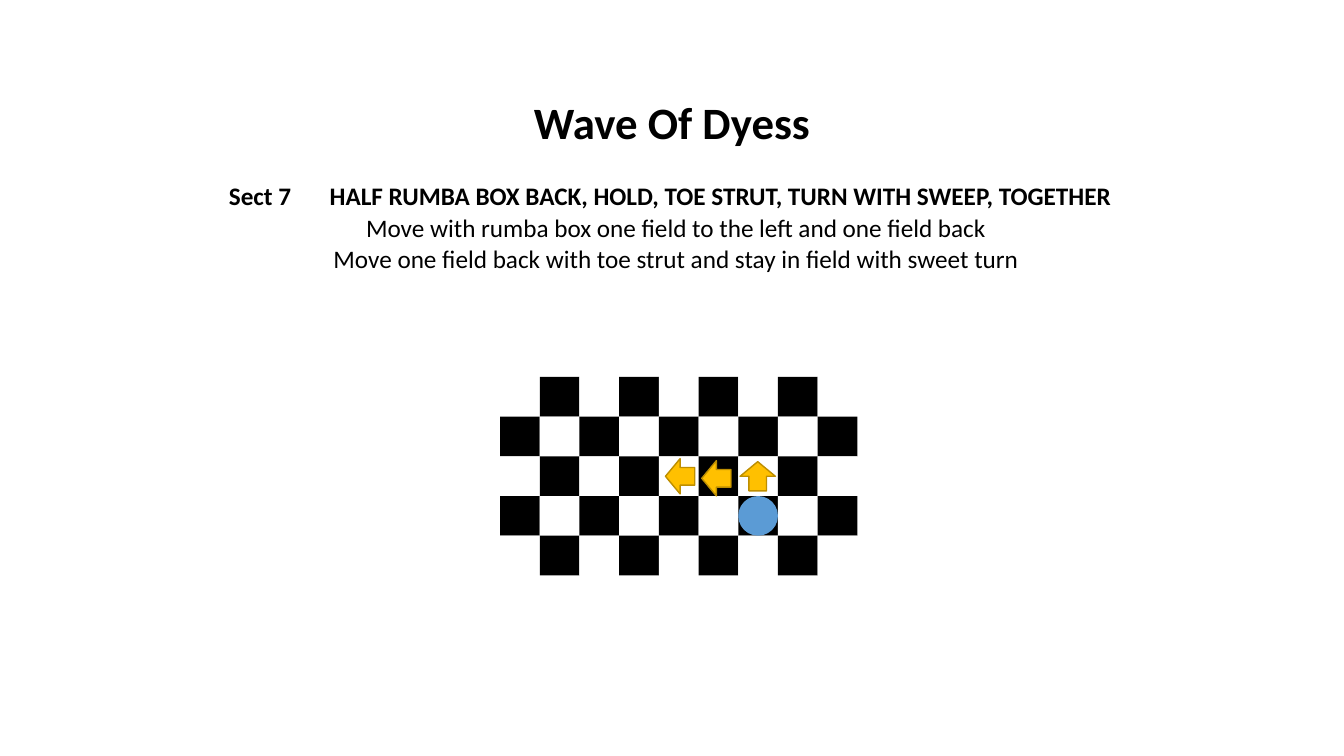
import dataclasses

import lxml.etree
import pptx
import pptx.dml.color
import pptx.enum.shapes
import pptx.enum.text
import pptx.oxml.ns
import pptx.util

Inches = pptx.util.Inches
Shape = pptx.enum.shapes.MSO_SHAPE


@dataclasses.dataclass
class Theme:
    font: str = "Calibri"
    title: int = 32
    body: int = 18
    black: str = "000000"
    white: str = "FFFFFF"
    blue: str = "5B9BD5"
    gold: str = "FFC000"
    edge: str = "BD8E00"


def color(code):
    return pptx.dml.color.RGBColor.from_string(code)


def write(para, text, *, font, size, ink, bold=False, center=True, before=0):
    align = pptx.enum.text.PP_ALIGN
    para.alignment = align.CENTER if center else align.LEFT
    para.space_before = pptx.util.Pt(before)
    run = para.add_run()
    run.text = text
    run.font.name = font
    run.font.size = pptx.util.Pt(size)
    run.font.bold = bold
    run.font.color.rgb = color(ink)


class Deck:
    def __init__(self, theme):
        self.theme = theme
        self.show = pptx.Presentation()
        self.show.slide_width = Inches(13.33)
        self.show.slide_height = Inches(7.5)
        self.slide = self.show.slides.add_slide(self.show.slide_layouts[1])

    def place(self, holder, left, top, width, height):
        holder.left, holder.top = Inches(left), Inches(top)
        holder.width, holder.height = Inches(width), Inches(height)
        frame = holder.text_frame
        frame.word_wrap = True
        frame.auto_size = pptx.enum.text.MSO_AUTO_SIZE.NONE
        frame.vertical_anchor = pptx.enum.text.MSO_ANCHOR.TOP
        return frame

    def title(self, text, *box):
        frame = self.place(self.slide.shapes.title, *box)
        write(frame.paragraphs[0], text, font=self.theme.font,
              size=self.theme.title, ink=self.theme.black, bold=True)

    def body(self, head, lines, *box):
        frame = self.place(self.slide.placeholders[1], *box)
        for i, text in enumerate([head, *lines]):
            para = frame.add_paragraph() if i else frame.paragraphs[0]
            write(para, text, font=self.theme.font, size=self.theme.body,
                  ink=self.theme.black, bold=i == 0, center=i > 0, before=1)
            props = para._p.get_or_add_pPr()
            props.set("marL", str(Inches(0.08)))
            props.set("indent", "0")
            lxml.etree.SubElement(props, pptx.oxml.ns.qn("a:buNone"))

    def shape(self, kind, left, top, width, height, fill, edge=None, turn=0):
        item = self.slide.shapes.add_shape(
            kind, Inches(left), Inches(top), Inches(width), Inches(height))
        item.shadow.inherit = False
        item.rotation = turn
        item.fill.solid()
        item.fill.fore_color.rgb = color(fill)
        if edge:
            item.line.color.rgb = color(edge)
            item.line.width = pptx.util.Pt(1)
        else:
            item.line.fill.background()

    def board(self, left, top, side, rows, cols):
        for row in range(rows):
            for col in range(cols):
                dark = (row + col) % 2
                self.shape(Shape.RECTANGLE, left + col * side, top + row * side,
                           side, side, self.theme.black if dark else self.theme.white)

    def arrow(self, left, top, turn):
        self.shape(Shape.RIGHT_ARROW, left, top, 0.29, 0.35,
                   self.theme.gold, self.theme.edge, turn)


def main():
    deck = Deck(Theme())
    deck.title("Wave Of Dyess", 2.09, 0.89, 9.15, 0.64)
    deck.body(
        "Sect 7\tHALF RUMBA BOX BACK, HOLD, TOE STRUT, TURN WITH SWEEP, TOGETHER",
        ["Move with rumba box one field to the left and one field back",
         "Move one field back with toe strut and stay in field with sweet turn"],
        2.09, 1.74, 9.15, 1.04)

    left, top, side = 4.96, 3.74, 3.15 / 8
    deck.board(left, top, side, rows=5, cols=9)
    deck.shape(Shape.OVAL, left + 6 * side, top + 3 * side, side, side, deck.theme.blue)
    for x, y, turn in [(7.37, 4.55, 270), (6.96, 4.57, 180), (6.6, 4.55, 180)]:
        deck.arrow(x, y, turn)
    deck.show.save("out.pptx")


if __name__ == "__main__":
    main()
